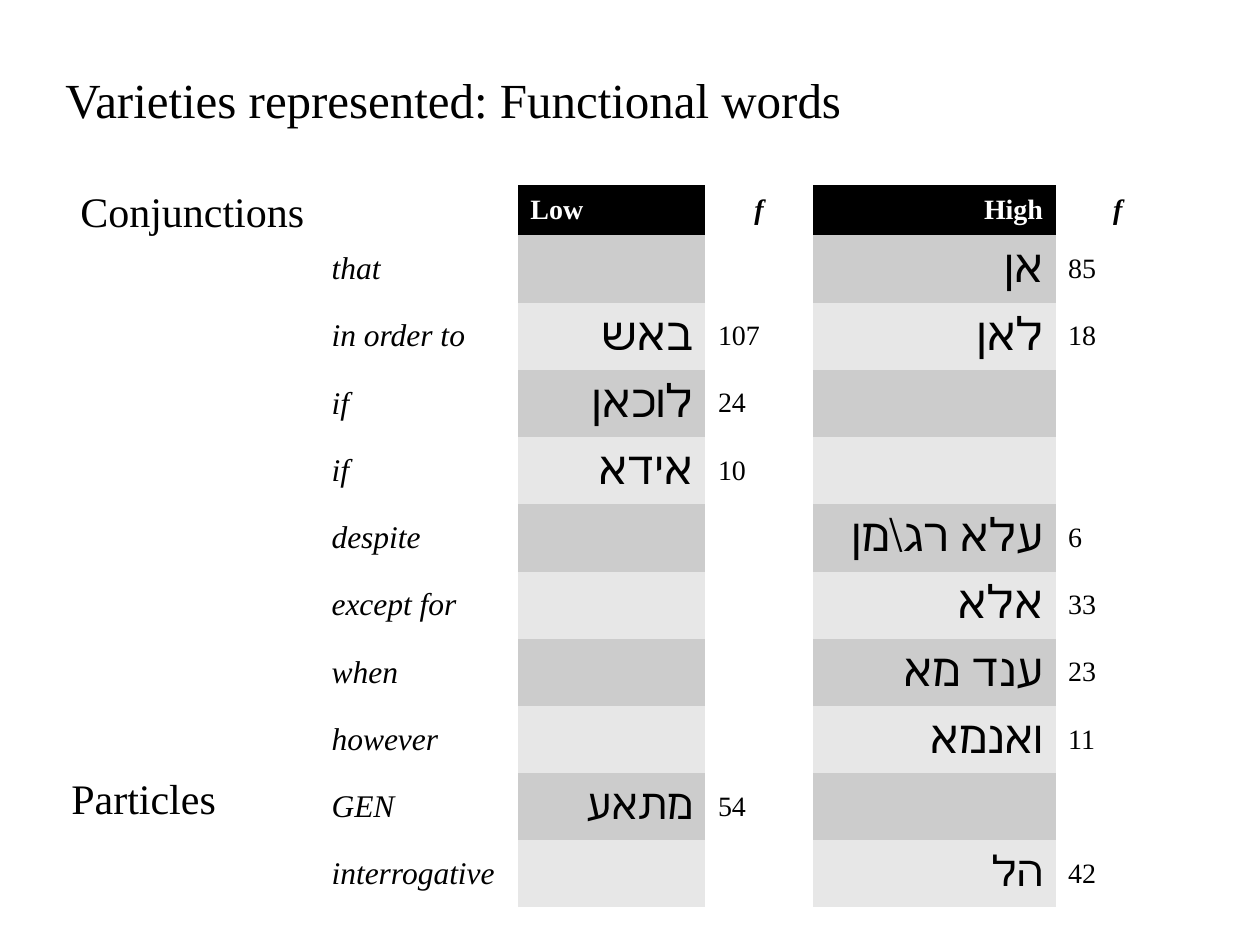
from pptx import Presentation
from pptx.dml.color import RGBColor
from pptx.enum.text import MSO_ANCHOR, PP_ALIGN
from pptx.util import Cm, Pt

FONT = "Times New Roman"
COLORS = {
    "text": "000000",
    "header": "000000",
    "header_text": "FFFFFF",
    "dark_band": "CCCCCC",
    "light_band": "E7E7E7",
}
NO_STYLE_NO_GRID = "{2D5ABB26-0587-4C30-8999-92F81FD0307C}"


def write(text_frame, text, size, color="text", align=PP_ALIGN.LEFT, bold=False, italic=False):
    paragraph = text_frame.paragraphs[0]
    paragraph.text = text
    paragraph.alignment = align
    for run in paragraph.runs:
        run.font.name = FONT
        run.font.size = Pt(size)
        run.font.bold = bold
        run.font.italic = italic
        run.font.color.rgb = RGBColor.from_string(COLORS[color])


def fill_cell(cell, color):
    cell.fill.solid()
    cell.fill.fore_color.rgb = RGBColor.from_string(COLORS[color])


presentation = Presentation()
presentation.slide_width = Cm(25.4)
presentation.slide_height = Cm(19.05)
slide = presentation.slides.add_slide(presentation.slide_layouts[6])

# Title and section headings: text, left, top, width, height, size
headings = [
    ("Varieties represented: Functional words", 1.07, 1.27, 22.66, 1.45, 28),
    ("Conjunctions", 1.37, 3.61, 5.28, 0.97, 24),
    ("Particles", 1.19, 15.44, 5.28, 1.96, 24),
]
for text, left, top, width, height, size in headings:
    text_box = slide.shapes.add_textbox(Cm(left), Cm(top), Cm(width), Cm(height))
    text_box.text_frame.word_wrap = True
    write(text_box.text_frame, text, size)

# Word table: meaning, low variety, frequency, high variety, frequency
words = [
    ("that", "", "", "אן", "85"),
    ("in order to", "באש", "107", "לאן", "18"),
    ("if", "לוכאן", "24", "", ""),
    ("if", "אידא", "10", "", ""),
    ("despite", "", "", "עלא רג\\מן", "6"),
    ("except for", "", "", "אלא", "33"),
    ("when", "", "", "ענד מא", "23"),
    ("however", "", "", "ואנמא", "11"),
    ("GEN", "מתאע", "54", "", ""),
    ("interrogative", "", "", "הל", "42"),
]
particles = ("GEN", "interrogative")
column_widths = [4.01, 3.78, 2.16, 4.9, 2.51]
header_height, row_height = 0.95, 1.35

table_frame = slide.shapes.add_table(
    len(words) + 1, len(column_widths), Cm(6.43), Cm(3.73),
    Cm(sum(column_widths)), Cm(header_height + row_height * len(words)),
)
table = table_frame.table
table.first_row = False
table.horz_banding = False
table._tbl.tblPr[0].text = NO_STYLE_NO_GRID
for column, width in zip(table.columns, column_widths):
    column.width = Cm(width)
for row in table.rows:
    row.height = Cm(row_height)
table.rows[0].height = Cm(header_height)
for cell in table.iter_cells():
    cell.vertical_anchor = MSO_ANCHOR.MIDDLE

for column, text, align in [(1, "Low", PP_ALIGN.LEFT), (3, "High", PP_ALIGN.RIGHT)]:
    cell = table.cell(0, column)
    fill_cell(cell, "header")
    write(cell.text_frame, text, 16, "header_text", align, bold=True)
for column in (2, 4):
    write(table.cell(0, column).text_frame, "f", 16, align=PP_ALIGN.CENTER, bold=True, italic=True)

for row, entry in enumerate(words, start=1):
    word_size = 24 if entry[0] in particles else 26
    write(table.cell(row, 0).text_frame, entry[0], 18, italic=True)
    for column in (1, 3):
        cell = table.cell(row, column)
        fill_cell(cell, "dark_band" if row % 2 else "light_band")
        write(cell.text_frame, entry[column], word_size, align=PP_ALIGN.RIGHT)
        write(table.cell(row, column + 1).text_frame, entry[column + 1], 16)

presentation.save("out.pptx")
